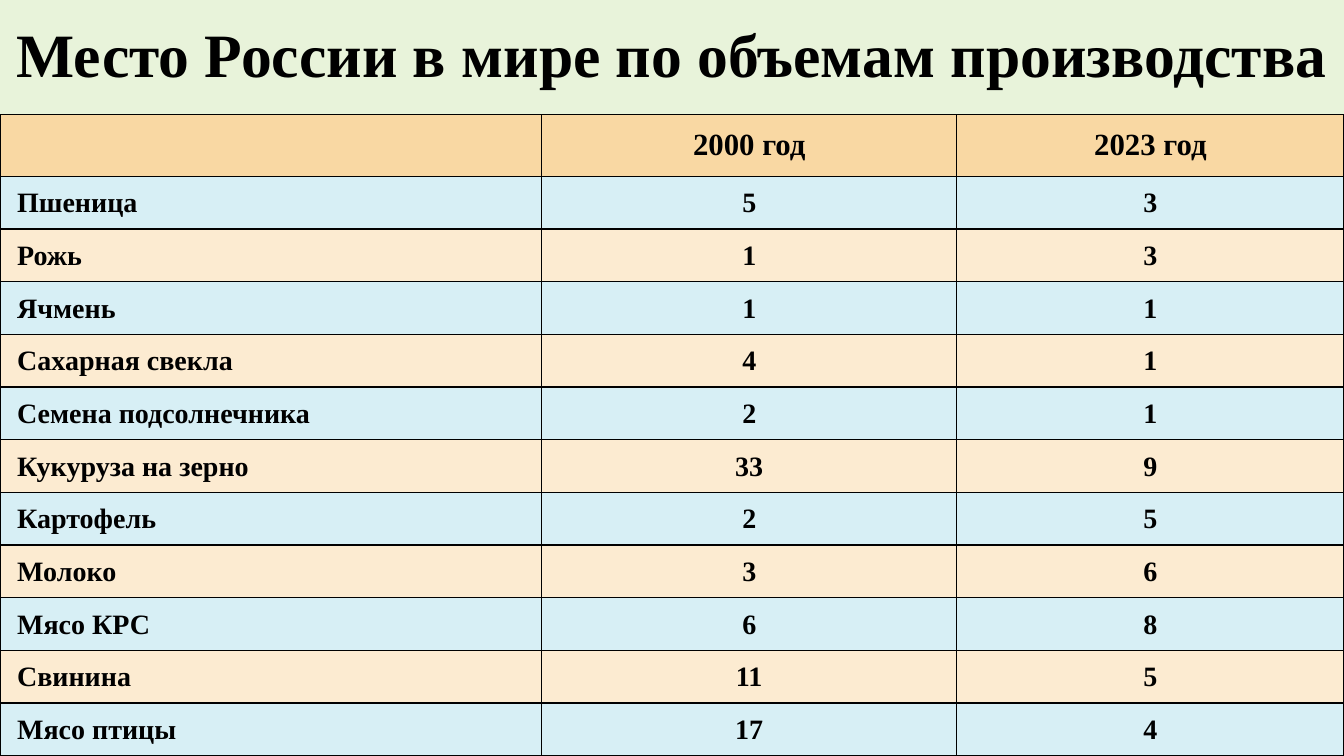
from lxml import etree
from pptx import Presentation
from pptx.dml import color
from pptx.enum import shapes, text
from pptx.oxml import ns
from pptx.util import Pt

FONT = "Times New Roman"
HEAD = ["", "2000 год", "2023 год"]
RANKS = [
    ("Пшеница", 5, 3),
    ("Рожь", 1, 3),
    ("Ячмень", 1, 1),
    ("Сахарная свекла", 4, 1),
    ("Семена подсолнечника", 2, 1),
    ("Кукуруза на зерно", 33, 9),
    ("Картофель", 2, 5),
    ("Молоко", 3, 6),
    ("Мясо КРС", 6, 8),
    ("Свинина", 11, 5),
    ("Мясо птицы", 17, 4),
]


def paint(fill, tint):
    """Give a fill one solid colour."""
    fill.solid()
    fill.fore_color.rgb = color.RGBColor.from_string(tint)


def write(para, words, size, align):
    """Add one bold black run to a paragraph."""
    para.alignment = align
    run = para.add_run()
    run.text = words
    run.font.name = FONT
    run.font.size = Pt(size)
    run.font.bold = True
    run.font.color.rgb = color.RGBColor.from_string("000000")


def frame(cell):
    """Draw thin black lines on the four sides of a cell."""
    props = cell._tc.get_or_add_tcPr()
    for side in ("a:lnL", "a:lnR", "a:lnT", "a:lnB"):
        line = etree.SubElement(props, ns.qn(side), w=str(Pt(1)))
        solid = etree.SubElement(line, ns.qn("a:solidFill"))
        etree.SubElement(solid, ns.qn("a:srgbClr"), val="000000")


def title(slide, left, top, width, height):
    """Place the heading band."""
    band = slide.shapes.add_shape(
        shapes.MSO_SHAPE.RECTANGLE, Pt(left), Pt(top), Pt(width), Pt(height))
    band.shadow.inherit = False
    paint(band.fill, "E8F3DA")
    band.line.fill.background()
    body = band.text_frame
    body.word_wrap = True
    body.vertical_anchor = text.MSO_ANCHOR.MIDDLE
    para = body.paragraphs[0]
    para.line_spacing = 0.9
    write(para, "Место России в мире по объемам производства", 44,
          text.PP_ALIGN.CENTER)


def ranking(slide, left, top, width, height):
    """Place the table of ranks by product and year."""
    rows = [HEAD] + RANKS
    grid = slide.shapes.add_table(
        len(rows), len(HEAD), Pt(left), Pt(top), Pt(width), Pt(height)).table
    for col, share in zip(grid.columns, (0.403, 0.309, 0.288)):
        col.width = Pt(width * share)
    first = 44
    for num, row in enumerate(rows):
        grid.rows[num].height = Pt((height - first) / len(RANKS) if num else first)
        tint = ("FCEBD1", "D7EFF5")[num % 2] if num else "F9D8A3"
        for pos, value in enumerate(row):
            cell = grid.cell(num, pos)
            frame(cell)
            paint(cell.fill, tint)
            cell.vertical_anchor = text.MSO_ANCHOR.MIDDLE
            para = cell.text_frame.paragraphs[0]
            if num:
                cell.margin_left = cell.margin_right = cell.margin_top = Pt(0.7)
                cell.margin_bottom = 0
                if pos == 0:
                    para._p.get_or_add_pPr().set("marL", str(Pt(11.5)))
            if value != "":
                align = text.PP_ALIGN.CENTER if pos else text.PP_ALIGN.LEFT
                write(para, str(value), 20 if num else 22, align)


def main():
    """Build and save the slide."""
    deck = Presentation()
    deck.slide_width, deck.slide_height = Pt(960), Pt(540)
    slide = deck.slides.add_slide(deck.slide_layouts[6])
    title(slide, 0, 0, 960, 82)
    ranking(slide, 0, 82, 960, 458)
    deck.save("out.pptx")


if __name__ == "__main__":
    main()
